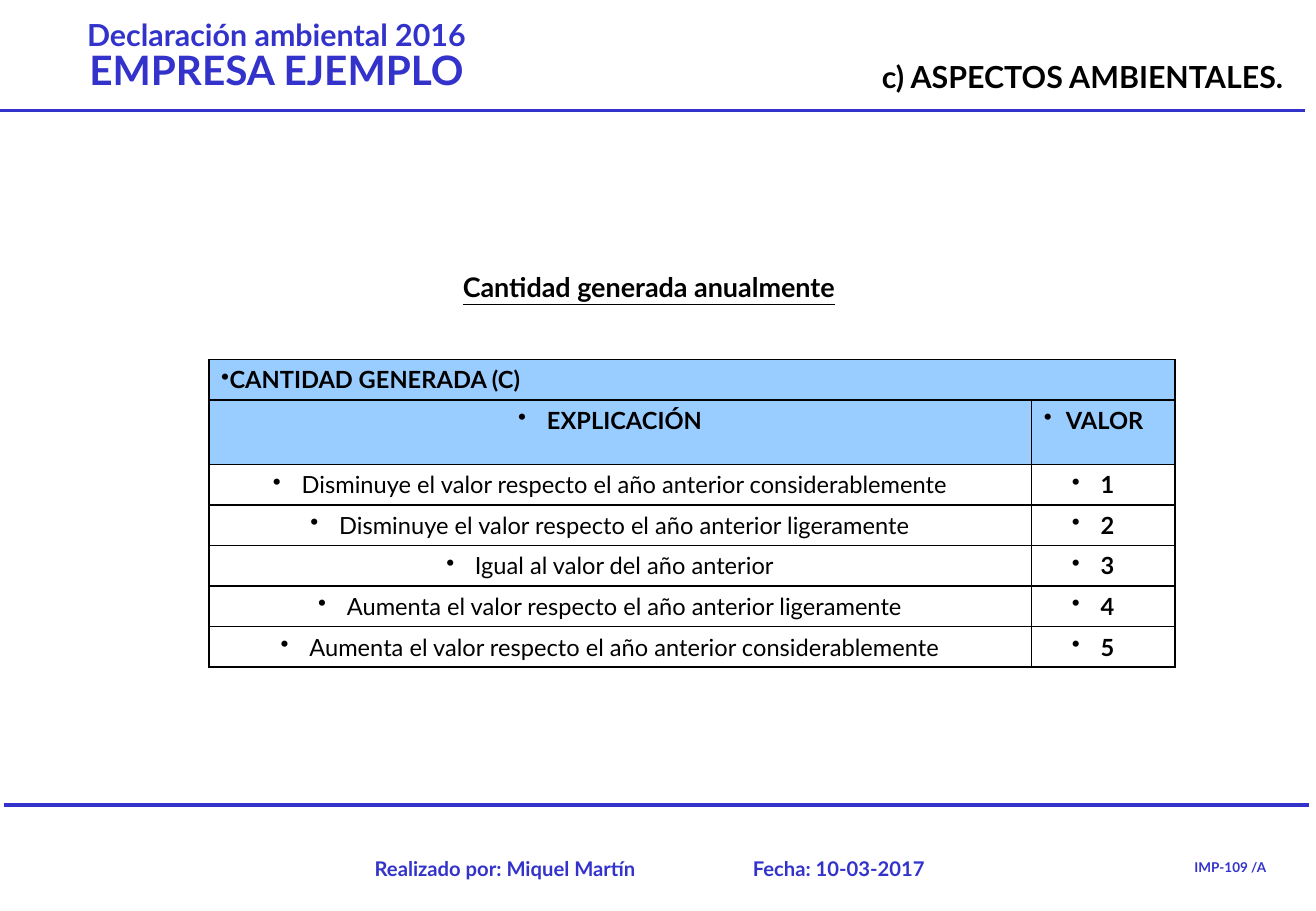
from lxml import etree
from pptx import Presentation
from pptx.dml.color import RGBColor
from pptx.enum import shapes, text
from pptx.oxml import ns
from pptx.util import Inches, Pt

BLUE = RGBColor(0x33, 0x33, 0xCC)
BLACK = RGBColor(0, 0, 0)
WHITE = RGBColor(0xFF, 0xFF, 0xFF)
HEADER_FILL = RGBColor(0x99, 0xCC, 0xFF)
FONT = "Lato"
LEFT, CENTER, RIGHT, JUSTIFY = (
    text.PP_ALIGN.LEFT, text.PP_ALIGN.CENTER, text.PP_ALIGN.RIGHT, text.PP_ALIGN.JUSTIFY)
LEVELS = [
    ("Disminuye el valor respecto el año anterior considerablemente", "1"),
    ("Disminuye el valor respecto el año anterior ligeramente", "2"),
    ("Igual al valor del año anterior", "3"),
    ("Aumenta el valor respecto el año anterior ligeramente", "4"),
    ("Aumenta el valor respecto el año anterior considerablemente", "5"),
]


def add_run(paragraph, words, size, color, bold=True, underline=None):
    """Append one formatted run."""
    run = paragraph.add_run()
    run.text = words
    run.font.name = FONT
    run.font.size = Pt(size)
    run.font.bold = bold
    run.font.underline = underline
    run.font.color.rgb = color


def add_text(slide, box, lines, color, align, underline=None, spacing=None):
    """Place a text box holding (words, size) lines."""
    frame = slide.shapes.add_textbox(*map(Inches, box)).text_frame
    frame.word_wrap = True
    for index, (words, size) in enumerate(lines):
        paragraph = frame.add_paragraph() if index else frame.paragraphs[0]
        paragraph.alignment = align
        paragraph.line_spacing = spacing
        add_run(paragraph, words, size, color, underline=underline)


def add_rule(slide, left, top, width):
    """Draw a horizontal blue rule."""
    rule = slide.shapes.add_connector(
        shapes.MSO_CONNECTOR.STRAIGHT,
        Inches(left), Inches(top), Inches(left + width), Inches(top))
    rule.line.color.rgb = BLUE
    rule.line.width = Pt(2.25)
    etree.SubElement(rule._element.spPr, ns.qn("a:effectLst"))


def add_header(slide, left, top, width):
    """Place the document name, the section title and the rule below."""
    add_rule(slide, left, top + 0.91, width)
    add_text(slide, (left + 0.08, top + 0.13, 4.39, 0.7),
             [("Declaración ambiental 2016", 18), ("EMPRESA EJEMPLO", 24)],
             BLUE, CENTER, spacing=0.85)
    add_text(slide, (left + 4.81, top + 0.43, 5.91, 0.4),
             [("c) ASPECTOS AMBIENTALES. ", 18)], BLACK, RIGHT)


def add_footer(slide, left, top, width):
    """Place the rule, the author, the date and the form code."""
    add_rule(slide, left, top, width)
    entries = [
        (2.8, 0.37, 2.5, "Realizado por: Miquel Martín", 12, RIGHT),
        (5.89, 0.37, 1.83, "Fecha: 10-03-2017 ", 12, RIGHT),
        (9.47, 0.39, 1.25, "IMP-109 /A", 8, CENTER),
    ]
    for x, y, entry_width, words, size, align in entries:
        add_text(slide, (left + x, top + y, entry_width, 0.25),
                 [(words, size)], BLUE, align)


def add_borders(cell):
    """Give a cell thin black borders on every side."""
    properties = cell._tc.get_or_add_tcPr()
    for side in ("a:lnL", "a:lnR", "a:lnT", "a:lnB"):
        line = etree.SubElement(properties, ns.qn(side), w=str(Pt(1)))
        fill = etree.SubElement(line, ns.qn("a:solidFill"))
        etree.SubElement(fill, ns.qn("a:srgbClr"), val=str(BLACK))


def fill_cell(cell, words, align, bold):
    """Write a bulleted line in a cell."""
    paragraph = cell.text_frame.paragraphs[0]
    paragraph.alignment = align
    etree.SubElement(paragraph._p.get_or_add_pPr(), ns.qn("a:buChar"), char="•")
    add_run(paragraph, words, 14, BLACK, bold)


def add_quantity_table(slide, left, top, width, height):
    """Place the table that scores the yearly quantity."""
    rows = [("CANTIDAD GENERADA (C)", ""), ("EXPLICACIÓN", "VALOR ")] + LEVELS
    table = slide.shapes.add_table(
        len(rows), 2, Inches(left), Inches(top), Inches(width), Inches(height)).table
    value_width, heading_height = 1.18, 0.53
    table.columns[0].width = Inches(width - value_width)
    table.columns[1].width = Inches(value_width)
    row_height = (height - heading_height) / (len(rows) - 1)
    for row_index, entries in enumerate(rows):
        is_header = row_index < 2
        table.rows[row_index].height = Inches(heading_height if row_index == 1 else row_height)
        for column_index, words in enumerate(entries):
            cell = table.cell(row_index, column_index)
            add_borders(cell)
            cell.fill.solid()
            cell.fill.fore_color.rgb = HEADER_FILL if is_header else WHITE
            cell.vertical_anchor = text.MSO_ANCHOR.TOP if is_header else text.MSO_ANCHOR.MIDDLE
            if words:
                fill_cell(cell, words, CENTER if row_index else JUSTIFY,
                          is_header or column_index == 1)
    table.cell(0, 0).merge(table.cell(0, 1))


def main():
    """Build and save the slide."""
    presentation = Presentation()
    presentation.slide_width = Inches(10.83)
    presentation.slide_height = Inches(7.5)
    slide = presentation.slides.add_slide(presentation.slide_layouts[6])
    add_header(slide, 0, 0, 10.74)
    add_footer(slide, 0.03, 6.63, 10.74)
    add_text(slide, (3.37, 2.18, 3.94, 0.37),
             [("Cantidad generada anualmente", 16)], BLACK, CENTER, underline=True)
    add_quantity_table(slide, 1.72, 2.96, 7.95, 2.45)
    presentation.save("out.pptx")


if __name__ == "__main__":
    main()
